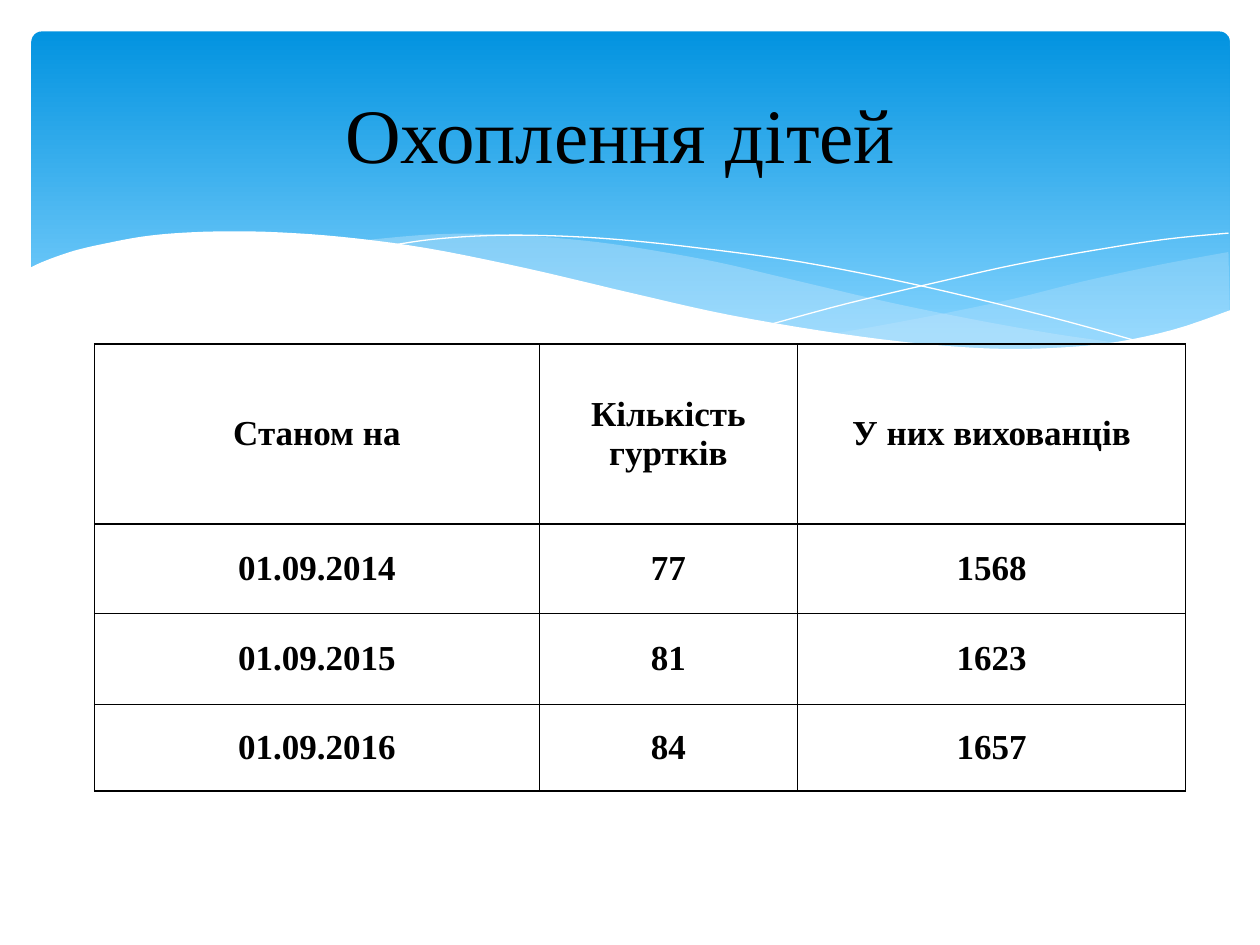
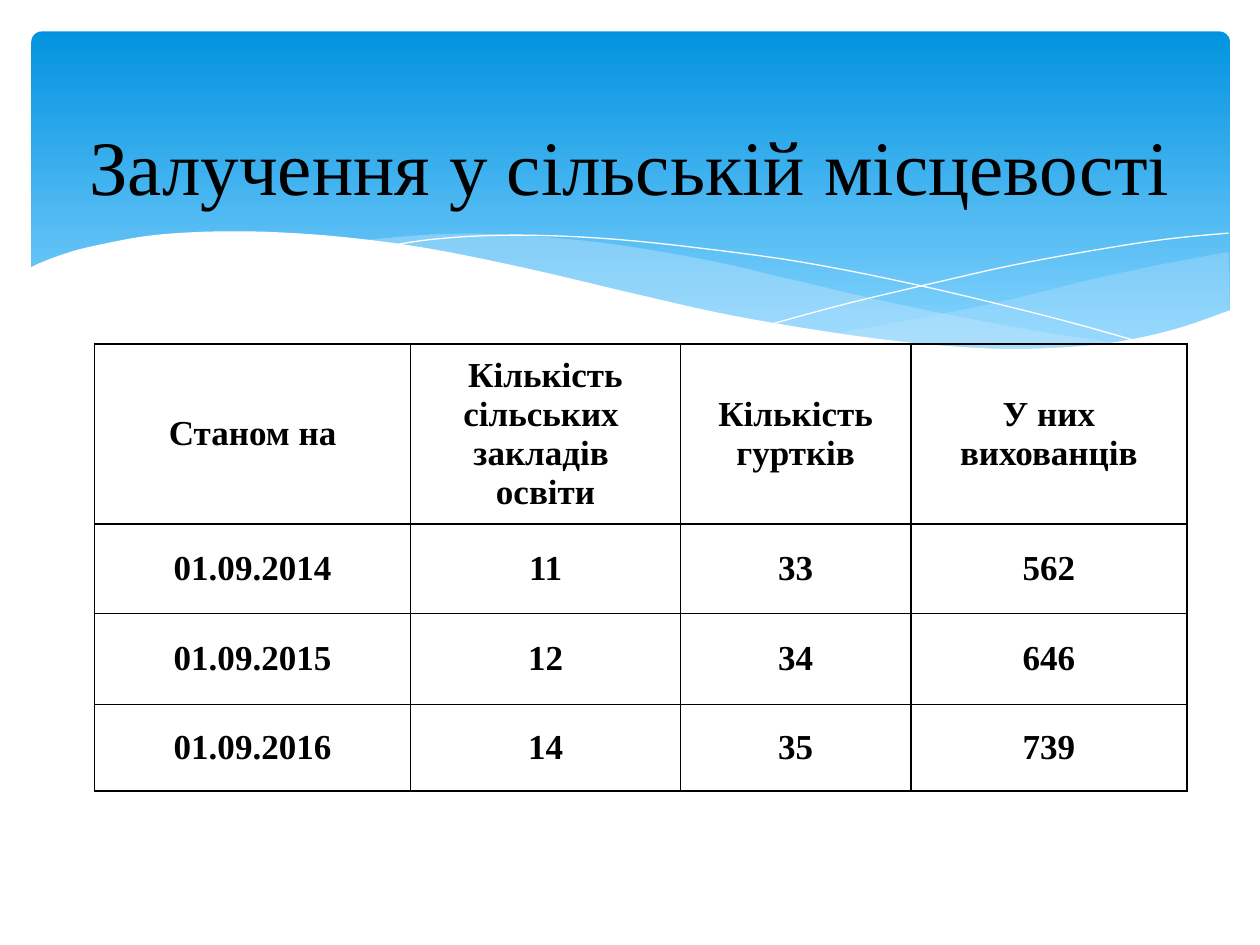
from lxml import etree
from pptx import Presentation
from pptx.dml.color import RGBColor
from pptx.enum.shapes import MSO_SHAPE
from pptx.enum.text import MSO_ANCHOR, PP_ALIGN
from pptx.oxml.ns import qn
from pptx.util import Pt

PX = 9144  # 100 px to the inch
ROUND = MSO_SHAPE.ROUNDED_RECTANGLE
MIDDLE = MSO_ANCHOR.MIDDLE
CENTER = PP_ALIGN.CENTER

COLORS = {"ink": "000000", "white": "FFFFFF", "deep": "0293E0",
          "sky": "83D3FE", "mist": "C6E7FC"}
FONT = "Times New Roman"
HEAD = {"size": Pt(44), "bold": False}
CELL = {"size": Pt(20), "bold": True}

SLIDES = [
    {"title": "Охоплення дітей ", "box": (50, 37, 900, 137),
     "cols": [353, 205, 308],
     "rows": [("Станом на", "Кількість гуртків", "У них вихованців"),
              ("01.09.2014", "77", "1568"),
              ("01.09.2015", "81", "1623"),
              ("01.09.2016", "84", "1657")]},
    {"title": "Залучення у сільській місцевості", "box": (50, 60, 900, 142),
     "cols": [251, 214, 183, 219],
     "rows": [("Станом на", "Кількість сільських  закладів  освіти",
               "Кількість гуртків", "У них вихованців"),
              ("01.09.2014", "11", "33", "562"),
              ("01.09.2015", "12", "34", "646"),
              ("01.09.2016", "14", "35", "739")]},
]
TABLE_AT = (75, 273)
HEIGHTS = [143, 71, 72, 69]
BAND = (25, 25, 951, 270)

# Each wave is a list of strands; the knots of a strand are joined smoothly.
WAVES = [
    {"fill": "mist", "alpha": 29, "strands": [
        [(975, 200), (921, 210), (861, 223), (805, 237), (753, 248),
         (706, 257), (661, 265)],
        [(661, 265), (705, 271), (757, 276), (803, 278), (854, 276),
         (897, 270), (935, 262), (976, 247)]]},
    {"fill": "mist", "alpha": 40, "strands": [
        [(893, 273), (837, 265), (775, 254), (706, 240), (629, 222),
         (569, 208), (514, 198), (464, 191), (399, 186), (344, 186),
         (286, 191)],
        [(286, 191), (342, 199), (404, 211), (491, 232), (566, 248),
         (634, 261), (695, 270), (748, 276), (807, 279), (857, 277),
         (893, 273)]]},
    {"line": "white", "strands": [
        [(309, 195), (343, 190), (387, 187), (433, 187), (489, 190),
         (556, 197), (636, 208), (727, 226), (831, 251), (907, 272)]]},
    {"line": "white", "strands": [
        [(613, 257), (672, 241), (748, 223), (806, 210), (866, 199),
         (924, 190), (975, 185)]]},
    {"fill": "white", "strands": [
        [(977, 246), (930, 262), (875, 273), (809, 277), (744, 274),
         (668, 265), (579, 250), (503, 233), (418, 213), (339, 197),
         (271, 188), (211, 184), (161, 184), (119, 187), (85, 193),
         (59, 199), (36, 207), (23, 213)],
        [(23, 329), (977, 329)]]},
]


def rgb(name):
    return RGBColor.from_string(COLORS[name])


def emu(box):
    return [v * PX for v in box]


def smooth(knots, steps=5):
    """Points of a Catmull-Rom curve through the knots, in EMU."""
    ext = [knots[0], *knots, knots[-1]]
    points = []
    for a, b, c, d in zip(ext, ext[1:], ext[2:], ext[3:]):
        for i in range(steps):
            t = i / steps
            points.append(tuple(
                PX * (q + t * (r - p) / 2
                      + t * t * (2 * p - 5 * q + 4 * r - s) / 2
                      + t ** 3 * (3 * q - p - 3 * r + s) / 2)
                for p, q, r, s in zip(a, b, c, d)))
    return points + [tuple(emu(knots[-1]))]


def write(frame, text, style):
    para = frame.paragraphs[0]
    para.alignment = CENTER
    run = para.add_run()
    run.text = text
    for key, value in {"name": FONT, **style}.items():
        setattr(run.font, key, value)
    run.font.color.rgb = rgb("ink")


def add_band(slide):
    band = slide.shapes.add_shape(ROUND, *emu(BAND))
    band.adjustments[0] = 0.03
    band.shadow.inherit = False
    band.line.fill.background()
    band.fill.gradient()
    band.fill.gradient_angle = 270
    for stop, name, place in zip(band.fill.gradient_stops,
                                 ("deep", "sky"), (0, 0.9)):
        stop.color.rgb = rgb(name)
        stop.position = place


def add_wave(slide, wave):
    points = [p for strand in wave["strands"] for p in smooth(strand)]
    pen = slide.shapes.build_freeform(*points[0], scale=1.0)
    pen.add_line_segments(points[1:], close="fill" in wave)
    shape = pen.convert_to_shape()
    shape.shadow.inherit = False
    if "line" in wave:
        shape.fill.background()
        shape.line.color.rgb = rgb(wave["line"])
        shape.line.width = Pt(0)
        return
    shape.line.fill.background()
    shape.fill.solid()
    shape.fill.fore_color.rgb = rgb(wave["fill"])
    if "alpha" in wave:
        tint = next(shape.element.spPr.iter(qn("a:srgbClr")))
        etree.SubElement(tint, qn("a:alpha"), val=str(wave["alpha"] * 1000))


def add_title(slide, text, box):
    frame = slide.shapes.add_textbox(*emu(box)).text_frame
    frame.word_wrap = True
    frame.vertical_anchor = MIDDLE
    write(frame, text, HEAD)


def add_edges(cell):
    props = cell._tc.get_or_add_tcPr()
    for side in ("lnL", "lnR", "lnT", "lnB"):
        edge = etree.SubElement(props, qn("a:" + side), w=str(Pt(1)))
        fill = etree.SubElement(edge, qn("a:solidFill"))
        etree.SubElement(fill, qn("a:srgbClr"), val=COLORS["ink"])


def add_grid(slide, cols, rows):
    box = (*TABLE_AT, sum(cols), sum(HEIGHTS))
    grid = slide.shapes.add_table(len(rows), len(cols), *emu(box)).table
    grid.first_row = grid.horz_banding = False
    for col, width in zip(grid.columns, cols):
        col.width = width * PX
    for row, height, texts in zip(grid.rows, HEIGHTS, rows):
        row.height = height * PX
        for cell, text in zip(row.cells, texts):
            add_edges(cell)
            cell.fill.background()
            cell.vertical_anchor = MIDDLE
            cell.margin_left = cell.margin_right = 7 * PX
            cell.margin_top = cell.margin_bottom = 0
            write(cell.text_frame, text, CELL)


def main():
    deck = Presentation()
    deck.slide_width, deck.slide_height = emu((1000, 750))
    for data in SLIDES:
        slide = deck.slides.add_slide(deck.slide_layouts[6])
        add_band(slide)
        for wave in WAVES:
            add_wave(slide, wave)
        add_grid(slide, data["cols"], data["rows"])
        add_title(slide, data["title"], data["box"])
    deck.save("out.pptx")


if __name__ == "__main__":
    main()
